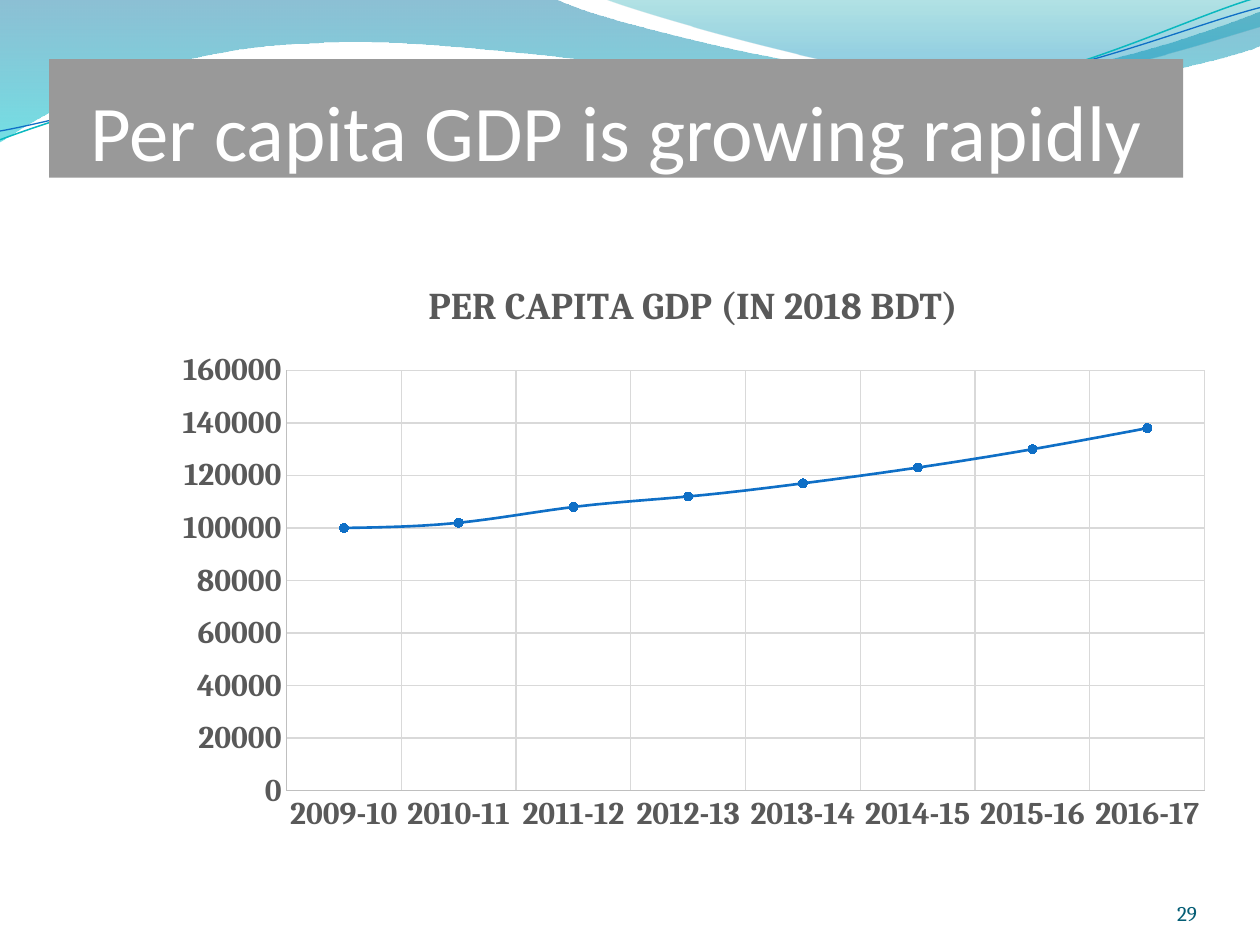
"""Build the slide on per capita GDP growth: wave header, title band and line chart."""
from math import cos, radians, sin
from lxml.etree import SubElement
from pptx import Presentation
from pptx.chart.data import CategoryChartData
from pptx.dml.color import RGBColor
from pptx.enum.chart import XL_CHART_TYPE as ChartType, XL_MARKER_STYLE as Marker, XL_TICK_MARK as Tick
from pptx.enum.shapes import MSO_SHAPE as Shape
from pptx.enum.text import MSO_ANCHOR as Anchor, PP_ALIGN as Align
from pptx.oxml.ns import qn
from pptx.util import Inches, Pt

COLORS = {
    "band": "999999", "white": "FFFFFF", "blue": "0F6FC6", "teal": "0AB8BF",
    "text": "595959", "axis": "BFBFBF", "grid": "D9D9D9", "number": "045D75",
    "wave_top": "0074A1", "wave_bottom": "00C6CF",
    "crest_top": "00A1A9", "crest_bottom": "008BBF",
}
TITLE = "Per capita GDP is growing rapidly"
PAGE_NUMBER = "29"
CHART_TITLE = "PER CAPITA GDP (IN 2018 BDT)"
GDP = {
    "2009-10": 100000, "2010-11": 102000, "2011-12": 108000, "2012-13": 112000,
    "2013-14": 117000, "2014-15": 123000, "2015-16": 130000, "2016-17": 138000,
}
WAVES = [
    {"area": (-0.01, -0.01, 10.02, 1.14),
     "outline": [(0, 0), (4.4, -0.01), (4.76, 0.17, 6.64, 0.63, 7.58, 0.63),
                 (8.53, 0.63, 9.58, 0.26, 10, 0.09), (10.01, 0.36),
                 (9.83, 0.44, 8.7, 0.76, 7.46, 0.75), (6.22, 0.75, 3.82, 0.28, 2.57, 0.34),
                 (1.29, 0.36, 0.46, 0.83, -0.01, 1.13), (0, 0)],
     "stops": [(0, "wave_top", 45), (1, "wave_bottom", 55)]},
    {"area": (4.79, -0.01, 5.21, 0.7),
     "outline": [(4.79, -0.01), (5.09, 0.11, 6.82, 0.62, 7.69, 0.65),
                 (8.56, 0.69, 9.61, 0.32, 10, 0.21), (10, 0), (4.79, -0.01)],
     "stops": [(0, "crest_top", 30), (0.8, "crest_bottom", 45)]},
]
STRANDS = [
    ((-0.02, 0.22, 10.02, 0.71),
     [(0, 1.11), (0.48, 0.93, 1.58, 0.57, 2.77, 0.52), (3.95, 0.47, 5.93, 0.89, 7.13, 0.8),
      (8.33, 0.71, 9.38, 0.15, 9.98, -0.02)], "teal", 0.85),
    ((-0.02, 0.3, 10.03, 0.58),
     [(0, 1.04), (0.47, 0.96, 1.64, 0.61, 2.83, 0.56), (4.03, 0.51, 5.97, 0.84, 7.17, 0.75),
      (8.36, 0.67, 9.41, 0.21, 10, 0.06)], "blue", 0.75),
]
STRAND_TILT = -2.7


def color(name):
    return RGBColor.from_string(COLORS[name])


def style_font(font, size, name, face="Cambria", bold=False):
    font.size, font.name, font.bold = Pt(size), face, bold
    font.color.rgb = color(name)


def style_line(line, name, width):
    line.color.rgb = color(name)
    line.width = Pt(width)


def level(x, y, area, tilt):
    left, top, width, height = area
    dx, dy = x - left - width / 2, y - top - height / 2
    turn = radians(-tilt)
    return (Inches(width / 2 + dx * cos(turn) - dy * sin(turn)),
            Inches(height / 2 + dx * sin(turn) + dy * cos(turn)))


def add_outline(page, area, outline, close, tilt=0):
    builder = page.shapes.build_freeform(0, 0)
    builder.add_line_segments([(Inches(1), Inches(1))], close=close)
    shape = builder.convert_to_shape()
    shape.left, shape.top, shape.width, shape.height = map(Inches, area)
    shape.rotation = tilt % 360
    shape.shadow.inherit = False
    track = next(shape._element.iter(qn("a:path")))
    for child in list(track):
        track.remove(child)
    track.set("w", str(shape.width))
    track.set("h", str(shape.height))
    for index, segment in enumerate(outline):
        tag = "a:moveTo" if index == 0 else "a:lnTo" if len(segment) == 2 else "a:cubicBezTo"
        command = SubElement(track, qn(tag))
        for x, y in zip(segment[::2], segment[1::2]):
            point = SubElement(command, qn("a:pt"))
            for key, value in zip("xy", level(x, y, area, tilt)):
                point.set(key, str(value))
    if close:
        SubElement(track, qn("a:close"))
    return shape


def add_wave(page, area, outline, stops):
    wave = add_outline(page, area, outline, True)
    wave.line.fill.background()
    wave.fill.gradient()
    wave.fill.gradient_angle = 270
    for stop, (position, name, _) in zip(wave.fill.gradient_stops, stops):
        stop.position = position
        stop.color.rgb = color(name)
    gradient = next(wave._element.iter(qn("a:gradFill")))
    for tint, (_, _, opacity) in zip(gradient.iter(qn("a:srgbClr")), stops):
        SubElement(tint, qn("a:alpha")).set("val", str(opacity * 1000))


def add_strand(page, area, outline, name, width):
    strand = add_outline(page, area, outline, False, STRAND_TILT)
    strand.fill.background()
    style_line(strand.line, name, width)


def write(box, text, align, top_inset, *font):
    frame = box.text_frame
    frame.word_wrap = True
    frame.vertical_anchor = Anchor.BOTTOM
    frame.margin_left = frame.margin_right = frame.margin_bottom = 0
    frame.margin_top = Inches(top_inset)
    para = frame.paragraphs[0]
    para.alignment = align
    span = para.add_run()
    span.text = text
    style_font(span.font, *font)


def add_title(page):
    band = page.shapes.add_shape(Shape.RECTANGLE, Inches(0.39), Inches(0.47), Inches(9), Inches(0.94))
    band.shadow.inherit = False
    band.fill.solid()
    band.fill.fore_color.rgb = color("band")
    band.line.fill.background()
    write(band, TITLE, Align.CENTER, 0.05, 45, "white", "Calibri")


def add_gdp_chart(page):
    data = CategoryChartData(number_format="0")
    data.categories = list(GDP)
    data.add_series(CHART_TITLE, list(GDP.values()))
    chart = page.shapes.add_chart(ChartType.LINE_MARKERS_STACKED, Inches(1.28), Inches(2.03),
                                  Inches(8.45), Inches(4.67), data).chart
    style_font(chart.font, 18, "text", bold=True)
    chart.has_legend = False
    chart.has_title = True
    span = chart.chart_title.text_frame.paragraphs[0].add_run()
    span.text = CHART_TITLE
    style_font(span.font, 21.6, "text", bold=True)
    chart.chart_title.include_in_layout = False

    for axis in (chart.category_axis, chart.value_axis):
        axis.major_tick_mark = axis.minor_tick_mark = Tick.NONE
        axis.has_major_gridlines = True
        style_line(axis.major_gridlines.format.line, "grid", 0.75)
        style_line(axis.format.line, "axis", 0.75)
        style_font(axis.tick_labels.font, 18, "text", bold=True)
    chart.value_axis.minimum_scale = 0
    chart.value_axis.maximum_scale = 160000
    chart.value_axis.major_unit = 20000

    plot = chart.plots[0]
    plot.vary_by_categories = False
    series = plot.series[0]
    series.smooth = True
    style_line(series.format.line, "blue", 1.5)
    series.marker.style = Marker.CIRCLE
    series.marker.size = 5
    series.marker.format.fill.solid()
    series.marker.format.fill.fore_color.rgb = color("blue")
    style_line(series.marker.format.line, "blue", 0.75)


def main():
    deck = Presentation()
    deck.slide_width, deck.slide_height = Inches(10), Inches(7.5)
    page = deck.slides.add_slide(deck.slide_layouts[6])
    for wave in WAVES:
        add_wave(page, **wave)
    for strand in STRANDS:
        add_strand(page, *strand)
    add_title(page)
    add_gdp_chart(page)
    number = page.shapes.add_textbox(Inches(8.67), Inches(6.95), Inches(0.83), Inches(0.4))
    write(number, PAGE_NUMBER, Align.RIGHT, 0, 12, "number")
    deck.save("out.pptx")


if __name__ == "__main__":
    main()
